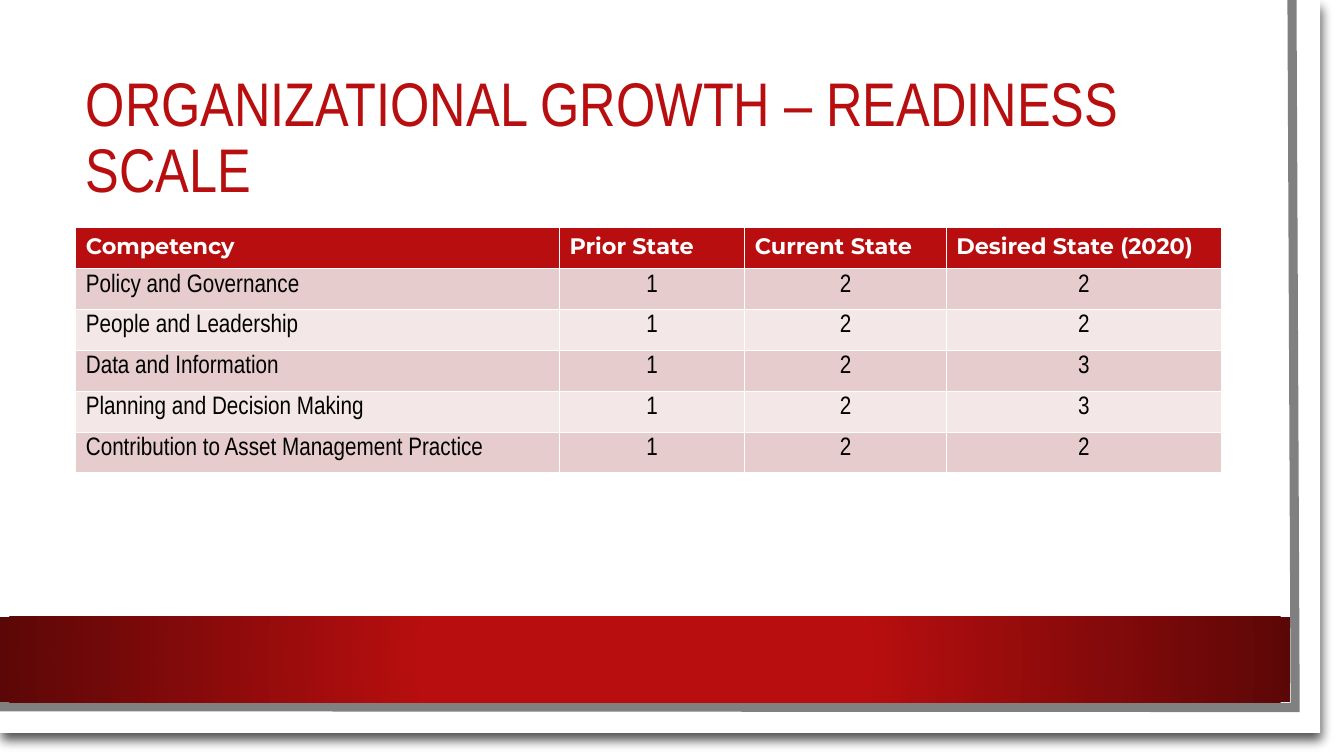
from lxml import etree
from pptx import Presentation
from pptx.dml.color import RGBColor
from pptx.enum.shapes import MSO_SHAPE
from pptx.enum.text import MSO_ANCHOR, MSO_AUTO_SIZE, PP_ALIGN
from pptx.oxml import parse_xml
from pptx.oxml.ns import qn
from pptx.util import Cm, Pt

RECT = MSO_SHAPE.RECTANGLE
MIDDLE = MSO_ANCHOR.MIDDLE
FIXED = MSO_AUTO_SIZE.NONE
LEFT, CENTER = PP_ALIGN.LEFT, PP_ALIGN.CENTER
RED = RGBColor(0xB8, 0x0E, 0x0F)
WHITE = RGBColor(0xFF, 0xFF, 0xFF)
BLACK = RGBColor(0, 0, 0)
GRAY = RGBColor(0x80, 0x80, 0x80)
ROSE = RGBColor(0xE6, 0xCC, 0xCC)
PALE = RGBColor(0xF3, 0xE7, 0xE7)
SPACE = 'xmlns:a="http://schemas.openxmlformats.org/drawingml/2006/main"'
SHADE = f'''<a:effectLst {SPACE}>
<a:outerShdw blurRad="99060" dist="76200" dir="4380000" algn="tl" rotWithShape="0">
<a:srgbClr val="000000"><a:alpha val="68000"/></a:srgbClr></a:outerShdw></a:effectLst>'''
GLOW = f'''<a:gradFill {SPACE} rotWithShape="1"><a:gsLst>
<a:gs pos="34000"><a:srgbClr val="B80E0F"/></a:gs>
<a:gs pos="100000"><a:srgbClr val="5C0707"/></a:gs></a:gsLst>
<a:path path="circle"><a:fillToRect l="50000" t="50000" r="50000" b="50000"/></a:path>
</a:gradFill>'''

TITLE = {"name": "Arial Narrow", "size": Pt(44), "bold": False}
HEAD = {"name": "Montserrat", "size": Pt(16), "bold": True}
BODY = {"name": "Arial Narrow", "size": Pt(18), "bold": False}


def style(para, look, color, align):
    para.alignment = align
    for key, value in look.items():
        setattr(para.font, key, value)
    para.font.color.rgb = color


deck = Presentation()
deck.slide_width, deck.slide_height = Cm(33.87), Cm(19.05)
slide = deck.slides.add_slide(deck.slide_layouts[5])
shapes = slide.shapes
title = shapes.title

panel = shapes.add_shape(RECT, 0, 0, Cm(33.27), Cm(18.47))
panel.fill.solid()
panel.fill.fore_color.rgb = WHITE
panel.line.fill.background()
panel._element.spPr.append(parse_xml(SHADE))

pen = shapes.build_freeform(Cm(32.56), 0)
pen.add_line_segments([(Cm(32.64), Cm(17.83)), (Cm(-0.08), Cm(17.81))], close=False)
edge = pen.convert_to_shape()
edge.shadow.inherit = False
edge.fill.background()
edge.line.color.rgb = GRAY
edge.line.width = Pt(6.5)
etree.SubElement(edge.line._get_or_add_ln(), qn("a:miter"), lim="800000")

band = shapes.add_shape(RECT, 0, Cm(15.54), Cm(32.51), Cm(2.16))
band.shadow.inherit = False
band.line.fill.background()
band._element.spPr.find(qn("a:prstGeom")).addnext(parse_xml(GLOW))

shapes._spTree.append(title._element)
place = {"left": Cm(1.91), "top": Cm(1.91), "width": Cm(28.88), "height": Cm(3.2)}
for key, value in place.items():
    setattr(title, key, value)
frame = title.text_frame
frame.text = "ORGANIZATIONAL GROWTH – READINESS SCALE"
frame.word_wrap = True
frame.auto_size = FIXED
frame.vertical_anchor = MIDDLE
frame.paragraphs[0].line_spacing = 0.9
style(frame.paragraphs[0], TITLE, RED, LEFT)

rows = [
    ("Competency", "Prior State", "Current State", "Desired State (2020)"),
    ("Policy and Governance", "1", "2", "2"),
    ("People and Leadership", "1", "2", "2"),
    ("Data and Information", "1", "2", "3"),
    ("Planning and Decision Making", "1", "2", "3"),
    ("Contribution to Asset Management Practice", "1", "2", "2"),
]
widths = [12.19, 4.67, 5.08, 6.93]
high = Cm(1.03)
grid = shapes.add_table(
    len(rows), len(widths), Cm(1.91), Cm(5.74), Cm(sum(widths)), high * len(rows)
).table
for col, width in zip(grid.columns, widths):
    col.width = Cm(width)
for r, row in enumerate(rows):
    grid.rows[r].height = high
    for c, text in enumerate(row):
        cell = grid.cell(r, c)
        cell.text = text
        cell.fill.solid()
        cell.fill.fore_color.rgb = RED if r == 0 else ROSE if r % 2 else PALE
        look, color = (BODY, BLACK) if r else (HEAD, WHITE)
        style(cell.text_frame.paragraphs[0], look, color, CENTER if r and c else LEFT)

deck.save("out.pptx")
